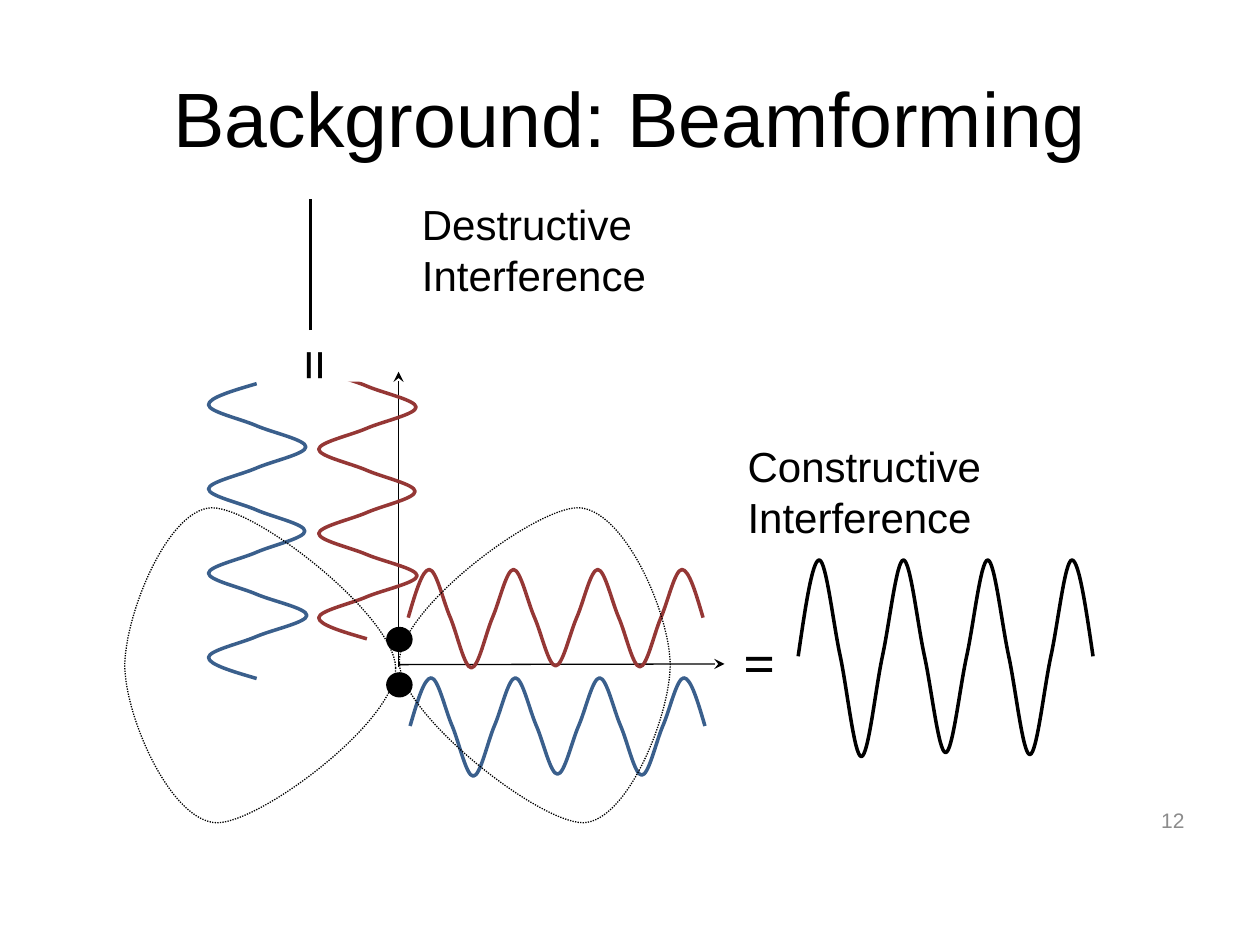
from dataclasses import dataclass
from typing import Optional

from lxml.etree import SubElement
from pptx import Presentation
from pptx.dml.color import RGBColor as Rgb
from pptx.enum.dml import MSO_LINE_DASH_STYLE as Dash
from pptx.enum.shapes import MSO_CONNECTOR as Link, MSO_SHAPE as Kind
from pptx.enum.text import MSO_ANCHOR as Anchor, PP_ALIGN as Align
from pptx.oxml.ns import qn
from pptx.util import Inches, Pt

COLS, ROWS = 100, 75
BLACK, WHITE, BLUE, RED, GREY = "000000", "FFFFFF", "3A5F8C", "953735", "8C8C8C"
SPAN, MID = 23.4, 0.49
LEVELS = [MID, 0, MID, 1, MID, 0, MID, 0.98, MID, 0, MID, 0.99, MID, 0, MID]
LOBE = [(0, 12.3), (-0.1, 8.1), (10.7, 0), (14.2, 0), (17.8, 0.1), (21.4, 8.2),
        (21.5, 12.4), (21.5, 16.5), (18.1, 24.9), (14.6, 25), (11, 25),
        (0.1, 16.4), (0, 12.3)]


@dataclass
class Label:
    """Text in a box on the grid."""
    text: str
    col: float
    row: float
    wide: float
    high: float
    size: float = 24
    font: str = "Arial"
    color: str = BLACK
    align: Align = Align.LEFT
    anchor: Anchor = Anchor.TOP
    bold: bool = False
    pad: tuple = (1, 0.5)
    turn: float = 0


@dataclass
class Wave:
    """A wave with its top left corner on the grid."""
    col: float
    row: float
    color: str
    high: float = 7.8
    turn: float = 0


@dataclass
class Line:
    """A straight line between two grid points."""
    start: tuple
    end: tuple
    width: float
    head: Optional[str] = None


def cell(n: float) -> int:
    """Turn grid units into a length."""
    return Inches(n * 10 / COLS)


def ink(code: str) -> Rgb:
    """Turn a hex string into a colour."""
    return Rgb.from_string(code)


def write(slide, item: Label) -> None:
    """Draw a text box."""
    box = slide.shapes.add_textbox(*map(cell, (item.col, item.row, item.wide, item.high)))
    box.rotation = item.turn
    frame = box.text_frame
    frame.word_wrap = True
    frame.vertical_anchor = item.anchor
    frame.margin_left = frame.margin_right = cell(item.pad[0])
    frame.margin_top = frame.margin_bottom = cell(item.pad[1])
    para = frame.paragraphs[0]
    para.alignment = item.align
    run = para.add_run()
    run.text = item.text
    font = run.font
    font.name, font.size, font.bold = item.font, Pt(item.size), item.bold
    font.color.rgb = ink(item.color)


def curve(slide, points: list, color: str, width: float, turn: float, close: bool):
    """Draw an unfilled chain of cubic curves."""
    spots = [(cell(x), cell(y)) for x, y in points]
    pen = slide.shapes.build_freeform(*spots[0])
    pen.add_line_segments(spots[1:], close=close)
    shape = pen.convert_to_shape()
    legs = list(shape._element.spPr.iter(qn("a:lnTo")))
    for first, *rest in zip(legs[::3], legs[1::3], legs[2::3]):
        first.tag = qn("a:cubicBezTo")
        for leg in rest:
            first.append(leg[0])
            leg.getparent().remove(leg)
    shape.shadow.inherit = False
    shape.fill.background()
    shape.line.color.rgb = ink(color)
    shape.line.width = Pt(width)
    shape.rotation = turn
    return shape


def ripple(slide, item: Wave) -> None:
    """Draw a wave."""
    last = len(LEVELS) - 1
    step = SPAN / last
    points = [(item.col, item.row + MID * item.high)]
    for i, (a, b) in enumerate(zip(LEVELS, LEVELS[1:])):
        part = 1 / 2 if i in (0, last - 1) else 1 / 3
        if a == MID:
            pulls = (a + (b - a) * part, b)
        else:
            pulls = (a, b + (a - b) * part)
        points += [(item.col + step * (i + k / 3), item.row + item.high * y)
                   for k, y in enumerate((*pulls, b), 1)]
    curve(slide, points, item.color, 2, item.turn, False)


def petal(slide, col: float, row: float, turn: float) -> None:
    """Draw one dotted lobe of the beam."""
    points = [(col + x, row + y) for x, y in LOBE]
    curve(slide, points, BLACK, 0, turn, True).line.dash_style = Dash.ROUND_DOT


def block(slide, kind: Kind, area: tuple, color: str, edge: bool) -> None:
    """Draw a filled shape, with a hairline edge if asked."""
    shape = slide.shapes.add_shape(kind, *map(cell, area))
    shape.shadow.inherit = False
    shape.fill.solid()
    shape.fill.fore_color.rgb = ink(color)
    if edge:
        shape.line.color.rgb = ink(color)
        shape.line.width = Pt(0)
    else:
        shape.line.fill.background()


def rule(slide, item: Line) -> None:
    """Draw a straight line."""
    link = slide.shapes.add_connector(Link.STRAIGHT, *map(cell, item.start + item.end))
    link.line.color.rgb = ink(BLACK)
    link.line.width = Pt(item.width)
    if item.head:
        SubElement(link.line._get_or_add_ln(), qn("a:tailEnd"), type=item.head)
    SubElement(link._element.spPr, qn("a:effectLst"))


def main() -> None:
    """Build the slide."""
    deck = Presentation()
    deck.slide_width, deck.slide_height = cell(COLS), cell(ROWS)
    slide = deck.slides.add_slide(deck.slide_layouts[6])
    sign = dict(size=32, font="Times New Roman", bold=True, pad=(0.7, 0.3))
    dot = (2, 1.9)

    write(slide, Label("Background: Beamforming", 5, 3, 90, 12.5, 44,
                       align=Align.CENTER, anchor=Anchor.MIDDLE))
    write(slide, Label("12", 71.7, 63.1, 23.3, 4, 12, color=GREY,
                       align=Align.RIGHT, anchor=Anchor.MIDDLE))
    write(slide, Label("=", 58.3, 49.5, 3.9, 6.1, **sign))
    rule(slide, Line((31.63, 52.9), (31.63, 29.5), 0.75, "stealth"))
    rule(slide, Line((31.63, 52.75), (57.5, 52.7), 0.75, "stealth"))
    block(slide, Kind.OVAL, (30.7, 49.8, *dot), BLACK, True)

    for item in (
        Wave(32.55, 53.8, BLUE),
        Wave(32.4, 45.2, RED),
        Wave(63.35, 44.45, BLACK, high=15.6),
        Wave(8.75, 38.25, BLUE, turn=270),
    ):
        ripple(slide, item)
    write(slide, Label("Constructive Interference", 58.35, 34.5, 34.6, 5))

    ripple(slide, Wave(17.5, 35.1, RED, turn=270))
    block(slide, Kind.RECTANGLE, (24.2, 27, 6.7, 3.3), WHITE, False)
    write(slide, Label("=", 22.05, 25.2, 5.4, 6.1, turn=270, **sign))
    rule(slide, Line((24.65, 26.2), (24.65, 15.8), 2))
    write(slide, Label("Destructive Interference", 32.5, 15.3, 33.2, 5))

    petal(slide, 31.7, 40.3, 0)
    petal(slide, 10, 40.3, 180)
    block(slide, Kind.OVAL, (30.7, 53.4, *dot), BLACK, True)
    deck.save("out.pptx")


if __name__ == "__main__":
    main()
